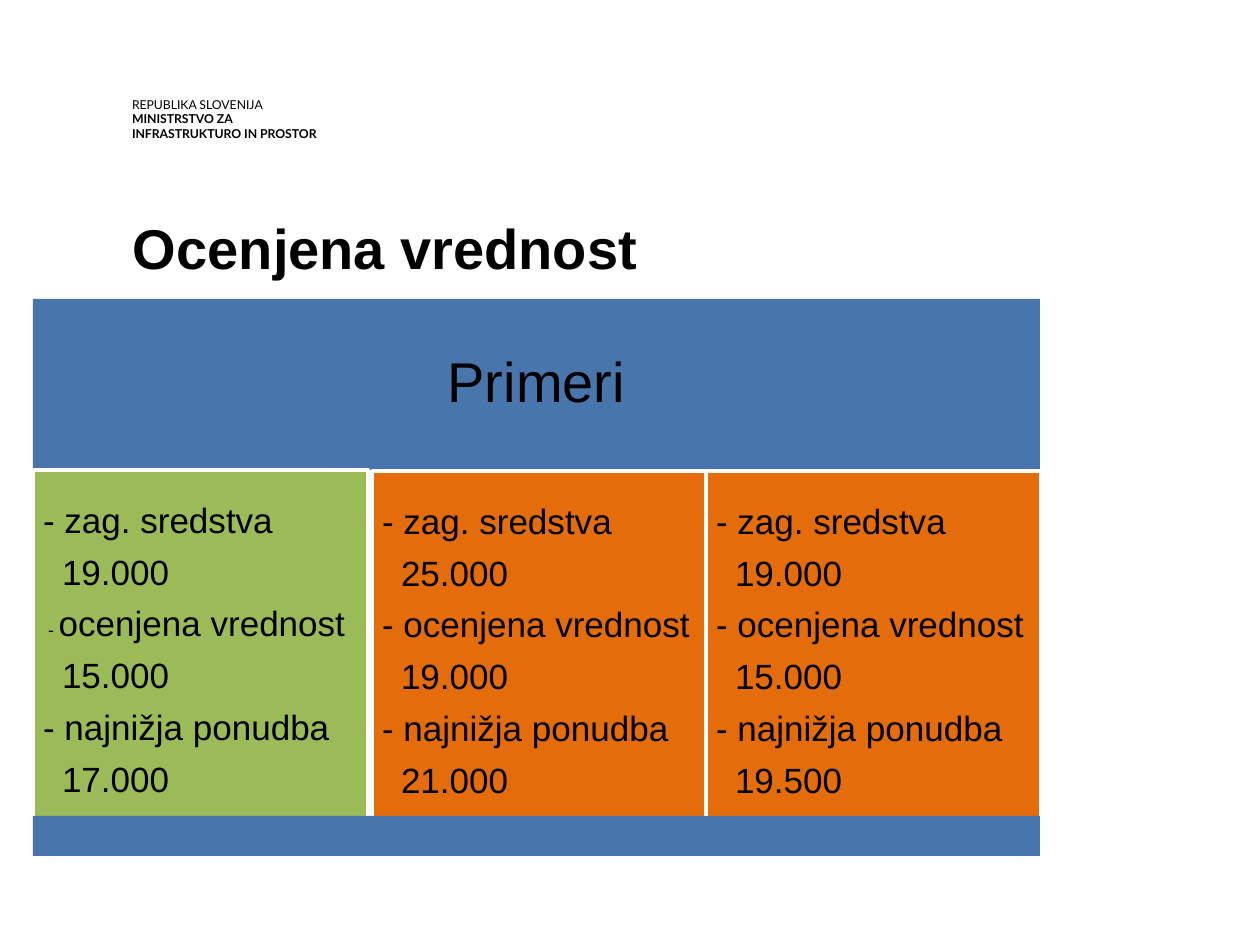
from dataclasses import dataclass

from pptx import Presentation
from pptx.dml.color import RGBColor
from pptx.enum.shapes import MSO_SHAPE
from pptx.enum.text import MSO_ANCHOR, PP_ALIGN
from pptx.util import Inches, Pt

RECTANGLE = MSO_SHAPE.RECTANGLE
TOP, MIDDLE = MSO_ANCHOR.TOP, MSO_ANCHOR.MIDDLE
LEFT, CENTER = PP_ALIGN.LEFT, PP_ALIGN.CENTER

PX_PER_INCH = 126
BLACK, WHITE = "000000", "FFFFFF"
BLUE, GREEN, ORANGE = "4875AC", "9BBB59", "E46C0A"
BAND_LEFT, BAND_WIDTH = 33, 1007
CELL_WIDTH, CELL_HEIGHT = 335, 363
VALUE_INDENT, SMALL_DASH_INDENT = 19, 5
LABELS = ("zag. sredstva", "ocenjena vrednost", "najnižja ponudba")


@dataclass
class Example:
    left: int
    top: int
    fill: str
    values: tuple[str, ...]
    small_dash_label: str = ""


EXAMPLES = (
    Example(33, 470, GREEN, ("19.000", "15.000", "17.000"), "ocenjena vrednost"),
    Example(372, 471, ORANGE, ("25.000", "19.000", "21.000")),
    Example(706, 471, ORANGE, ("19.000", "15.000", "19.500")),
)


def px(length: int) -> int:
    return Inches(length / PX_PER_INCH)


def color(value: str) -> RGBColor:
    return RGBColor.from_string(value)


def set_frame(frame, inset: int, anchor, wrap: bool = True) -> None:
    frame.word_wrap = wrap
    frame.vertical_anchor = anchor
    frame.margin_left = frame.margin_right = px(inset)
    frame.margin_top = frame.margin_bottom = px(inset)


def set_font(paragraph, size: int, name: str = "Arial", bold: bool = False) -> None:
    font = paragraph.font
    font.size, font.name, font.bold = Pt(size), name, bold
    font.color.rgb = color(BLACK)


def next_paragraph(frame, is_first: bool):
    return frame.paragraphs[0] if is_first else frame.add_paragraph()


def add_rectangle(slide, left: int, top: int, width: int, height: int,
                  fill: str, outlined: bool = False):
    shape = slide.shapes.add_shape(RECTANGLE, px(left), px(top), px(width), px(height))
    shape.shadow.inherit = False
    shape.fill.solid()
    shape.fill.fore_color.rgb = color(fill)
    if outlined:
        shape.line.color.rgb = color(WHITE)
        shape.line.width = Pt(2)
    else:
        shape.line.fill.background()
    return shape


def add_ministry(slide) -> None:
    box = slide.shapes.add_textbox(px(132), px(97), px(205), px(44))
    set_frame(box.text_frame, 0, TOP)
    lines = (("REPUBLIKA SLOVENIJA", False),
             ("MINISTRSTVO ZA INFRASTRUKTURO IN PROSTOR", True))
    for index, (text, bold) in enumerate(lines):
        paragraph = next_paragraph(box.text_frame, index == 0)
        paragraph.text = text
        paragraph.line_spacing = Pt(8.4)
        set_font(paragraph, 7, "Lato", bold)


def set_title(slide) -> None:
    title = slide.shapes.title
    title.left, title.top, title.width, title.height = px(133), px(213), px(508), px(68)
    set_frame(title.text_frame, 0, TOP, wrap=False)
    paragraph = title.text_frame.paragraphs[0]
    paragraph.text = "Ocenjena vrednost"
    paragraph.alignment = LEFT
    set_font(paragraph, 32, bold=True)


def add_heading(slide) -> None:
    band = add_rectangle(slide, BAND_LEFT, 299, BAND_WIDTH, 171, BLUE)
    set_frame(band.text_frame, 16, MIDDLE)
    paragraph = band.text_frame.paragraphs[0]
    paragraph.text = "Primeri"
    paragraph.alignment = CENTER
    paragraph.line_spacing = 0.9
    set_font(paragraph, 32)


def add_line(frame, text: str, is_first: bool = False, indent: int = 0):
    paragraph = next_paragraph(frame, is_first)
    paragraph.text = text
    paragraph.alignment = LEFT
    paragraph.line_spacing = 0.9
    paragraph.space_after = Pt(8)
    paragraph._p.get_or_add_pPr().set("marL", str(px(indent)))
    set_font(paragraph, 20)
    return paragraph


def add_example(slide, example: Example) -> None:
    cell = add_rectangle(slide, example.left, example.top, CELL_WIDTH, CELL_HEIGHT,
                         example.fill, outlined=True)
    frame = cell.text_frame
    set_frame(frame, 10, MIDDLE)
    for index, (label, value) in enumerate(zip(LABELS, example.values)):
        if label == example.small_dash_label:
            paragraph = add_line(frame, "- ", indent=SMALL_DASH_INDENT)
            paragraph.runs[0].font.size = Pt(10)
            paragraph.add_run().text = label
        else:
            add_line(frame, f"- {label}", is_first=index == 0)
        add_line(frame, value, indent=VALUE_INDENT)


def main() -> None:
    presentation = Presentation()
    presentation.slide_width, presentation.slide_height = Inches(10), Inches(7.5)
    slide = presentation.slides.add_slide(presentation.slide_layouts[5])
    add_ministry(slide)
    set_title(slide)
    add_heading(slide)
    for example in EXAMPLES:
        add_example(slide, example)
    add_rectangle(slide, BAND_LEFT, 816, BAND_WIDTH, 40, BLUE)
    presentation.save("out.pptx")


if __name__ == "__main__":
    main()
